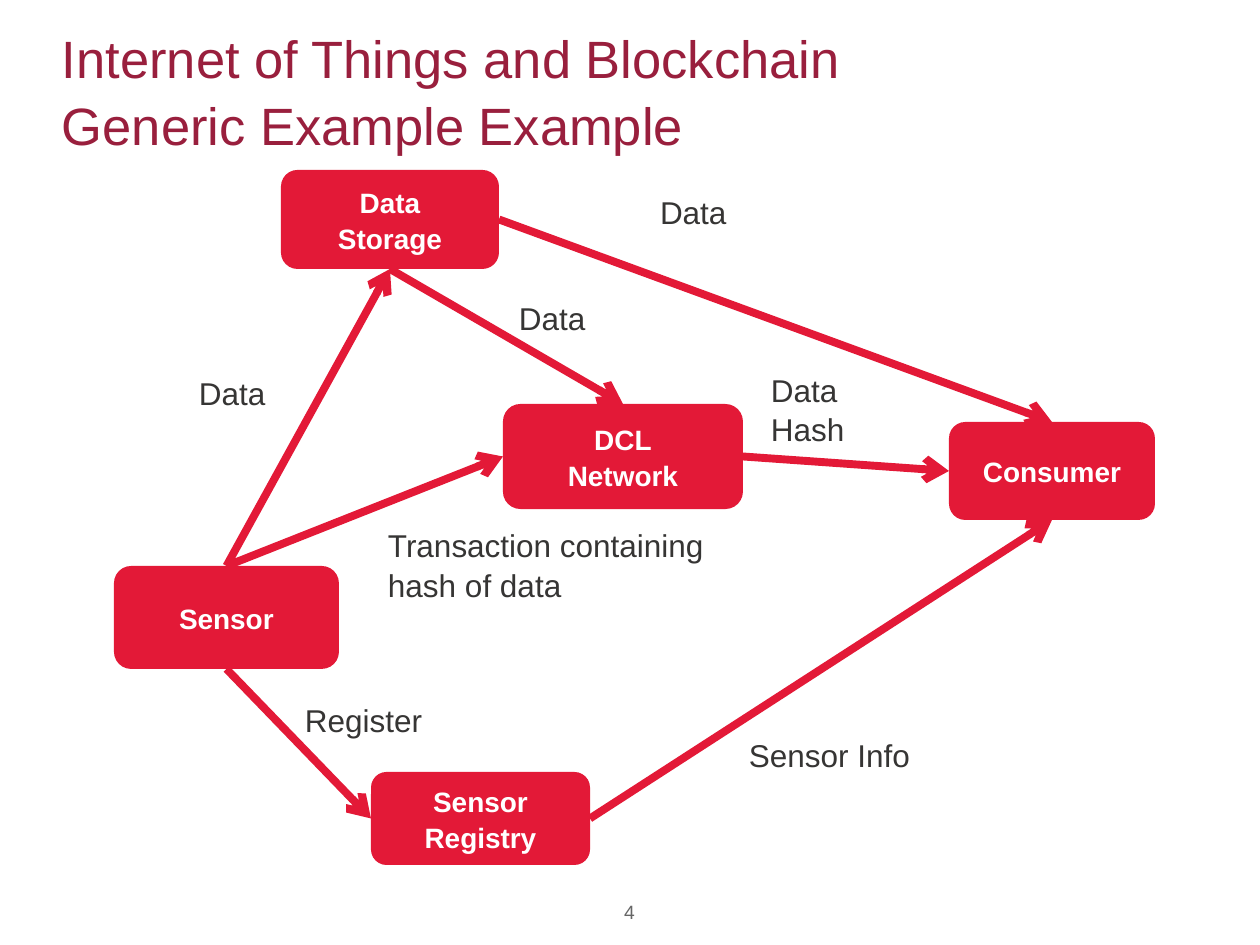
import pptx
import pptx.util
import pptx.dml.color
import pptx.enum.shapes
import pptx.enum.text
import pptx.oxml.ns
from lxml import etree

PX = 914400 // 126
COLORS = {"red": "E31937", "title": "991F3D", "label": "363534",
          "number": "666666", "white": "FFFFFF"}
SHAPE = pptx.enum.shapes.MSO_SHAPE
ANCHOR = pptx.enum.text.MSO_ANCHOR
ALIGN = pptx.enum.text.PP_ALIGN
TOP, LEFT, BOTTOM, RIGHT = range(4)


def rgb(name):
    return pptx.dml.color.RGBColor.from_string(COLORS[name])


def write(sp, text, size=18, color="label", bold=False, align=ALIGN.LEFT,
          anchor=ANCHOR.TOP, side=0):
    """Fill a shape with text: \\n starts a paragraph, \\v breaks a line."""
    tf = sp.text_frame
    tf.word_wrap = True
    tf.vertical_anchor = anchor
    tf.margin_left = tf.margin_right = side * PX
    tf.margin_top = tf.margin_bottom = 0
    tf.text = text
    for p in tf.paragraphs:
        p.alignment = align
        p.line_spacing = 1.05
        for r in p.runs:
            r.font.name = "Arial"
            r.font.size = pptx.util.Pt(size)
            r.font.bold = bold
            r.font.color.rgb = rgb(color)


prs = pptx.Presentation()
prs.slide_width, prs.slide_height = 1260 * PX, 945 * PX
s = prs.slides.add_slide(prs.slide_layouts[6])

title = s.shapes.add_textbox(62 * PX, 26 * PX, 1135 * PX, 127 * PX)
write(title, "Internet of Things and Blockchain\vGeneric Example Example",
      size=30, color="title", anchor=ANCHOR.MIDDLE)

number = s.shapes.add_textbox(576 * PX, 899 * PX, 107 * PX, 33 * PX)
write(number, "4", size=11, color="number", align=ALIGN.CENTER)

# Boxes: text, left, top, width, height
boxes = {}
for text, *place in [
    ("Sensor", 114, 566, 225, 103),
    ("DCL\nNetwork", 503, 404, 240, 105),
    ("Consumer", 949, 422, 206, 98),
    ("Sensor\nRegistry", 371, 772, 219, 93),
    ("Data\nStorage", 281, 170, 218, 99),
]:
    sp = s.shapes.add_shape(SHAPE.ROUNDED_RECTANGLE, *[v * PX for v in place])
    sp.shadow.inherit = False
    sp.fill.solid()
    sp.fill.fore_color.rgb = rgb("red")
    sp.line.fill.background()
    write(sp, text, size=16, color="white", bold=True, align=ALIGN.CENTER,
          anchor=ANCHOR.MIDDLE, side=9)
    boxes[text.replace("\n", " ")] = sp

# Arrows: from box and side, to box and side
for start, start_side, end, end_side in [
    ("Sensor", BOTTOM, "Sensor Registry", LEFT),
    ("Sensor", TOP, "DCL Network", LEFT),
    ("Sensor", TOP, "Data Storage", BOTTOM),
    ("Sensor Registry", RIGHT, "Consumer", BOTTOM),
    ("Data Storage", RIGHT, "Consumer", TOP),
    ("DCL Network", RIGHT, "Consumer", LEFT),
    ("Data Storage", BOTTOM, "DCL Network", TOP),
]:
    arrow = s.shapes.add_connector(
        pptx.enum.shapes.MSO_CONNECTOR.STRAIGHT, 0, 0, 0, 0)
    arrow.begin_connect(boxes[start], start_side)
    arrow.end_connect(boxes[end], end_side)
    arrow.line.color.rgb = rgb("red")
    arrow.line.width = pptx.util.Pt(4.5)
    etree.SubElement(arrow.line._get_or_add_ln(),
                     pptx.oxml.ns.qn("a:tailEnd"), type="arrow")
    etree.SubElement(arrow._element.spPr, pptx.oxml.ns.qn("a:effectLst"))

# Arrow labels: text, left, top, width, height
for text, *place in [
    ("Register", 305, 699, 119, 38),
    ("Sensor Info", 749, 734, 165, 38),
    ("Transaction containing hash of data", 388, 524, 332, 77),
    ("Data", 660, 191, 121, 38),
    ("Data", 199, 372, 113, 38),
    ("Data Hash", 771, 369, 84, 77),
    ("Data", 519, 297, 68, 38),
]:
    write(s.shapes.add_textbox(*[v * PX for v in place]), text)

prs.save("out.pptx")
